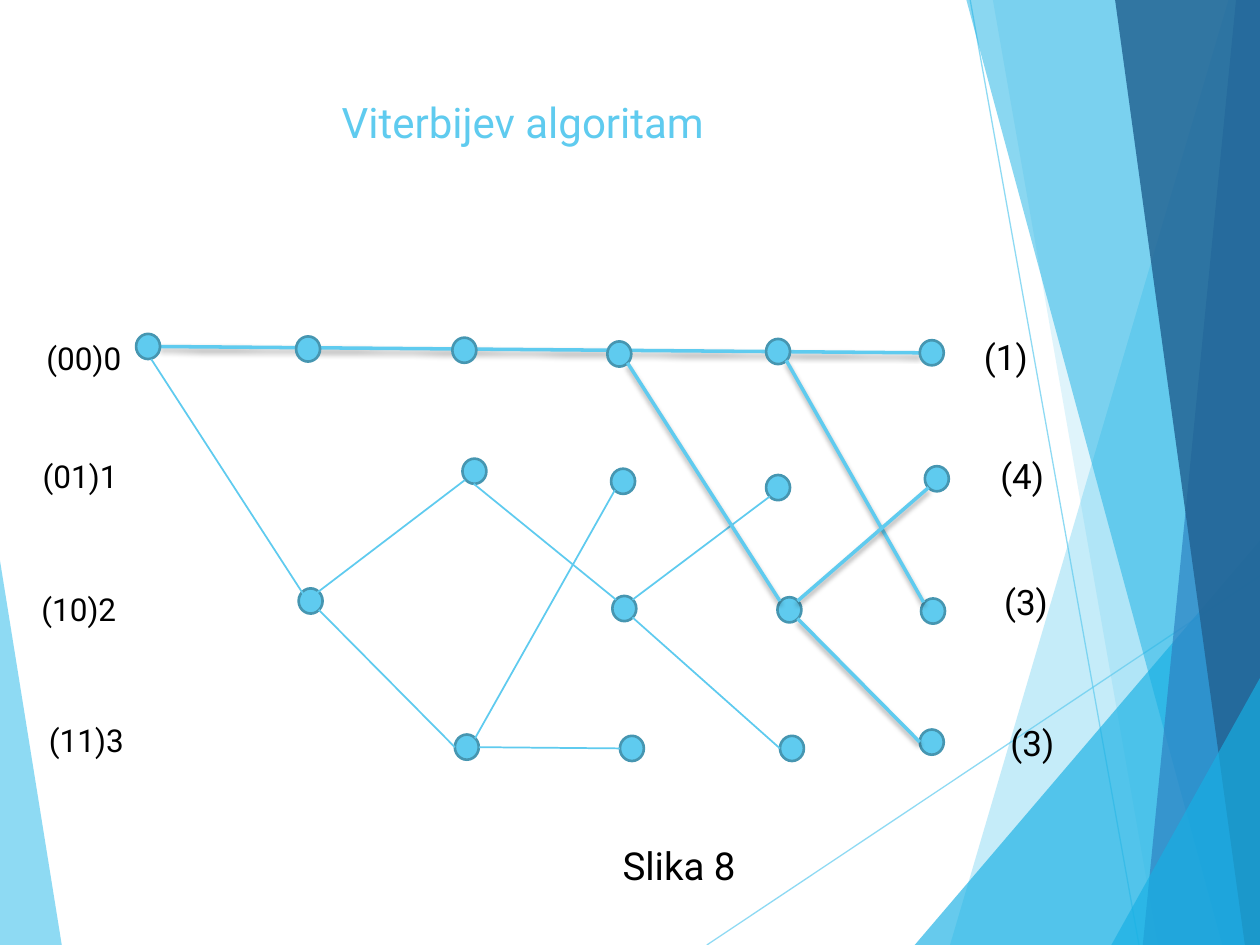
from lxml import etree
from pptx import Presentation
from pptx.dml.color import RGBColor
from pptx.enum.shapes import MSO_CONNECTOR as CONN, MSO_SHAPE as SHAPE
from pptx.enum.text import PP_ALIGN as ALIGN
from pptx.oxml.ns import qn
from pptx.util import Inches, Pt

SKY = RGBColor(0x5F, 0xCB, 0xEF)
CYAN = RGBColor(0x17, 0xB0, 0xE4)
BLUE = RGBColor(0x2E, 0x83, 0xC3)
NAVY = RGBColor(0x22, 0x62, 0x92)
RIM = RGBColor(0x46, 0x96, 0xB1)
BLACK = RGBColor(0, 0, 0)

FACETS_BEHIND = [([(0, 4.45), (0.49, 7.5), (0, 7.5)], SKY, 70)]
RAYS = [(5.61, 7.5, 10, 4.57), (7.7, 0, 9.04, 7.5)]
FACETS = [
    ([(9.75, 0), (7.54, 7.5), (10, 7.5), (10, 0)], SKY, 36),
    ([(7.88, 0), (9.19, 7.5), (10, 7.5), (10, 0)], SKY, 20),
    ([(7.26, 7.5), (10, 4.29), (10, 7.5)], CYAN, 66),
    ([(7.67, 0), (9.7, 7.5), (10, 7.5), (10, 0)], CYAN, 50),
    ([(9.81, 0), (9.07, 7.5), (10, 7.5), (10, 0)], BLUE, 70),
    ([(8.85, 0), (9.88, 7.5), (10, 7.5), (10, 0)], NAVY, 82),
    ([(8.82, 7.5), (10, 5.38), (10, 7.5)], CYAN, 66),
]
TOP_PATH = (1.27, 2.75, 7.3, 2.8)
STATES = [
    (1.08, 2.65), (2.35, 2.67), (3.59, 2.68), (4.82, 2.71), (6.08, 2.69), (7.3, 2.7),
    (3.67, 3.64), (4.85, 3.72), (6.08, 3.77), (7.34, 3.7),
    (2.37, 4.67), (4.86, 4.73), (6.17, 4.74), (7.31, 4.75),
    (3.61, 5.83), (4.92, 5.84), (6.19, 5.84), (7.3, 5.79),
]
BRANCHES = [
    (1.2, 2.85, 2.41, 4.72), (2.53, 4.84, 3.61, 5.93), (3.8, 5.93, 4.92, 5.94),
    (2.43, 4.77, 3.69, 3.81), (3.76, 3.84, 4.89, 4.76), (4.88, 3.89, 3.77, 5.86),
    (5.02, 4.9, 6.19, 5.94), (5.02, 4.76, 6.11, 3.94),
]
SURVIVORS = [
    (6.24, 2.86, 7.33, 4.78), (4.98, 2.88, 6.19, 4.77),
    (6.33, 4.77, 7.37, 3.87), (6.33, 4.91, 7.3, 5.89),
]
STATE_LABELS = [
    ("(00)0", 0.27, 2.64), ("(01)1", 0.24, 3.58),
    ("(10)2", 0.23, 4.63), ("(11)3", 0.29, 5.67),
]
METRICS = [("(1)", 7.71, 2.61), ("(4)", 7.84, 3.56), ("(3)", 7.87, 4.56), ("(3)", 7.92, 5.68)]


class Trellis:
    """Draws the styled elements of a trellis diagram on one slide."""

    font = "Roboto"

    def __init__(self, slide):
        self.slide = slide
        self.shapes = slide.shapes

    def fade(self, sp, opacity):
        for clr in sp._element.spPr.iter(qn("a:srgbClr")):
            etree.SubElement(clr, qn("a:alpha"), val=str(opacity * 1000))

    def facet(self, points, color, opacity):
        corners = [(Inches(x), Inches(y)) for x, y in points]
        builder = self.shapes.build_freeform(*corners[0])
        builder.add_line_segments(corners[1:], close=True)
        sp = builder.convert_to_shape()
        sp.shadow.inherit = False
        sp.fill.solid()
        sp.fill.fore_color.rgb = color
        sp.line.fill.background()
        self.fade(sp, opacity)

    def line(self, ends, width, opacity=100, shadow=False):
        cx = self.shapes.add_connector(CONN.STRAIGHT, *map(Inches, ends))
        cx.line.color.rgb = SKY
        cx.line.width = Pt(width)
        if opacity < 100:
            self.fade(cx, opacity)
        effects = etree.SubElement(cx._element.spPr, qn("a:effectLst"))
        if shadow:
            outer = etree.SubElement(
                effects, qn("a:outerShdw"), blurRad=str(Pt(3)), dist=str(Pt(2)),
                dir="5400000", rotWithShape="0")
            clr = etree.SubElement(outer, qn("a:srgbClr"), val="000000")
            etree.SubElement(clr, qn("a:alpha"), val="35000")

    def state(self, x, y):
        sp = self.shapes.add_shape(SHAPE.OVAL, Inches(x), Inches(y), Inches(0.19), Inches(0.2))
        sp.shadow.inherit = False
        sp.fill.solid()
        sp.fill.fore_color.rgb = SKY
        sp.line.color.rgb = RIM
        sp.line.width = Pt(1.5)

    def text(self, text, x, y, w, h, size, color=BLACK, align=ALIGN.LEFT):
        tf = self.shapes.add_textbox(Inches(x), Inches(y), Inches(w), Inches(h)).text_frame
        tf.word_wrap = True
        tf.text = text
        p = tf.paragraphs[0]
        p.alignment = align
        r = p.runs[0]
        r.font.name = self.font
        r.font.size = Pt(size)
        r.font.color.rgb = color


def main():
    prs = Presentation()
    prs.slide_width, prs.slide_height = Inches(10), Inches(7.5)
    s = Trellis(prs.slides.add_slide(prs.slide_layouts[6]))

    for facet in FACETS_BEHIND:
        s.facet(*facet)
    for ray in RAYS:
        s.line(ray, 0.75, opacity=70)
    for facet in FACETS:
        s.facet(*facet)

    s.text("Viterbijev algoritam", 0.68, 0.72, 6.94, 0.97, 24, SKY, ALIGN.CENTER)
    s.line(TOP_PATH, 2, shadow=True)
    for state in STATES:
        s.state(*state)
    for branch in BRANCHES:
        s.line(branch, 1)
    for survivor in SURVIVORS:
        s.line(survivor, 2, shadow=True)
    for label, x, y in STATE_LABELS:
        s.text(label, x, y, 0.87, 0.4, 18)
    for metric, x, y in METRICS:
        s.text(metric, x, y, 0.89, 0.44, 20)
    s.text("Slika 8", 4.39, 6.63, 2, 0.46, 22, align=ALIGN.CENTER)

    prs.save("out.pptx")


if __name__ == "__main__":
    main()
